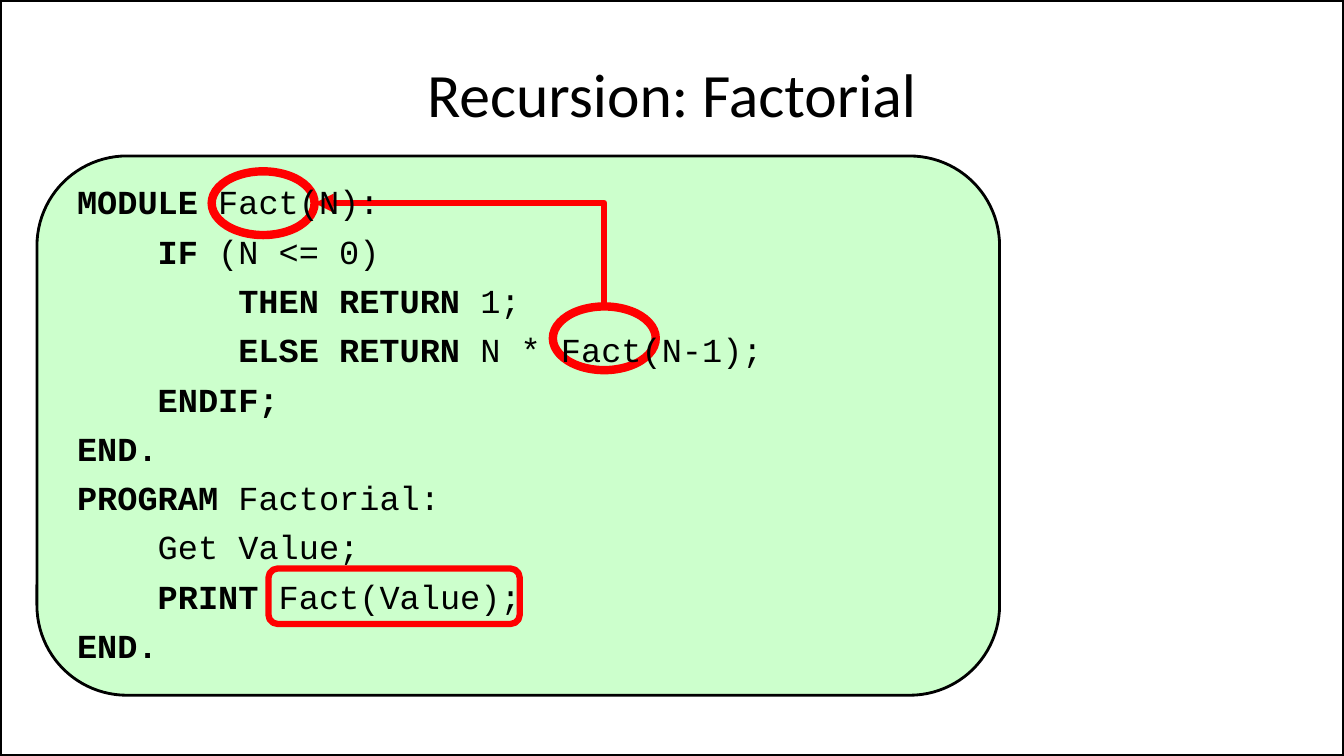
from lxml.etree import SubElement
from pptx import Presentation
from pptx.dml.color import RGBColor
from pptx.enum.shapes import MSO_CONNECTOR, MSO_SHAPE
from pptx.enum.text import MSO_ANCHOR, PP_ALIGN
from pptx.oxml.ns import qn
from pptx.util import Pt

SLIDE_WIDTH, SLIDE_HEIGHT = 960, 540
BLACK, RED, GREEN = "000000", "FF0000", "CCFFCC"
INDENT_STEP = 57.6  # four Courier New characters at 24 pt
HANGING = 27

# Indent level, keywords in bold, rest of the line
CODE = [
    (0, "MODULE", " Fact(N):"),
    (1, "IF", " (N <= 0)"),
    (2, "THEN RETURN", " 1;"),
    (2, "ELSE RETURN", " N * Fact(N-1);"),
    (1, "ENDIF;", ""),
    (0, "END.", ""),
    (0, "PROGRAM ", "Factorial:"),
    (1, "", "Get Value;"),
    (1, "PRINT", " Fact(Value);"),
    (0, "END.", ""),
]


def color(hex_string):
    return RGBColor.from_string(hex_string)


def set_font(font, name, size):
    font.name = name
    font.size = Pt(size)
    font.color.rgb = color(BLACK)


def add_outline(slide, kind, box, line_color, line_width, fill=None):
    shape = slide.shapes.add_shape(kind, *map(Pt, box))
    shape.shadow.inherit = False
    if fill:
        shape.fill.solid()
        shape.fill.fore_color.rgb = color(fill)
    else:
        shape.fill.background()
    shape.line.color.rgb = color(line_color)
    shape.line.width = Pt(line_width)
    return shape


def set_title(slide, text):
    title = slide.shapes.title
    title.left, title.top, title.width, title.height = map(Pt, (48, 21.6, 864, 90))
    title.text_frame.text = text
    title.text_frame.vertical_anchor = MSO_ANCHOR.MIDDLE
    heading = title.text_frame.paragraphs[0]
    heading.alignment = PP_ALIGN.CENTER
    set_font(heading.font, "Calibri", 44)


def add_recursion_arrow(slide, call, header):
    """Go up from the top of the call, then left to the side of the header."""
    start_x, start_y = call.left + call.width // 2, call.top
    end_x, end_y = header.left + header.width, header.top + header.height // 2
    # The one-bend connector is laid out upright and turned by 270 degrees
    center_x, center_y = (start_x + end_x) // 2, (start_y + end_y) // 2
    half_width, half_height = (start_y - end_y) // 2, (start_x - end_x) // 2
    arrow = slide.shapes.add_connector(
        MSO_CONNECTOR.ELBOW,
        center_x - half_width, center_y + half_height,
        center_x + half_width, center_y - half_height)
    arrow.line.color.rgb = color(RED)
    arrow.line.width = Pt(4.5)
    properties = arrow._element.spPr
    properties.find(qn("a:xfrm")).set("rot", "16200000")
    properties.find(qn("a:prstGeom")).set("prst", "bentConnector2")
    SubElement(properties.find(qn("a:ln")), qn("a:tailEnd"), type="triangle")
    SubElement(properties, qn("a:effectLst"))


def add_code(slide, box, lines):
    frame = slide.shapes.add_textbox(*map(Pt, box)).text_frame
    frame.word_wrap = True
    for number, (level, keywords, rest) in enumerate(lines):
        line = frame.add_paragraph() if number else frame.paragraphs[0]
        line.space_before = Pt(6.4)
        set_font(line.font, "Courier New", 24)
        indents = line._p.get_or_add_pPr()
        indents.set("marL", str(Pt(HANGING + level * INDENT_STEP)))
        indents.set("indent", str(Pt(-HANGING)))
        for text, bold in ((keywords, True), (rest, False)):
            if text:
                run = line.add_run()
                run.text = text
                run.font.bold = bold


def main():
    presentation = Presentation()
    presentation.slide_width = Pt(SLIDE_WIDTH)
    presentation.slide_height = Pt(SLIDE_HEIGHT)
    slide = presentation.slides.add_slide(presentation.slide_layouts[5])

    # Code panel, title and slide frame
    add_outline(slide, MSO_SHAPE.ROUNDED_RECTANGLE,
                (26.4, 111.4, 687.6, 385.2), BLACK, 2, GREEN)
    set_title(slide, "Recursion: Factorial")
    add_outline(slide, MSO_SHAPE.RECTANGLE,
                (0, 0, SLIDE_WIDTH, SLIDE_HEIGHT), BLACK, 3)

    # The recursive call leads back to the module header
    call, header = (
        add_outline(slide, MSO_SHAPE.OVAL, (left, top, 73.5, 45.5), RED, 6)
        for left, top in ((394.9, 218.9), (151.2, 122.4)))
    add_recursion_arrow(slide, call, header)

    # Pseudocode, with the first call marked
    add_code(slide, (48, 126, 795, 356.4), CODE)
    add_outline(slide, MSO_SHAPE.ROUNDED_RECTANGLE,
                (191.8, 406.1, 179.5, 39.6), RED, 4.5)

    presentation.save("out.pptx")


if __name__ == "__main__":
    main()
